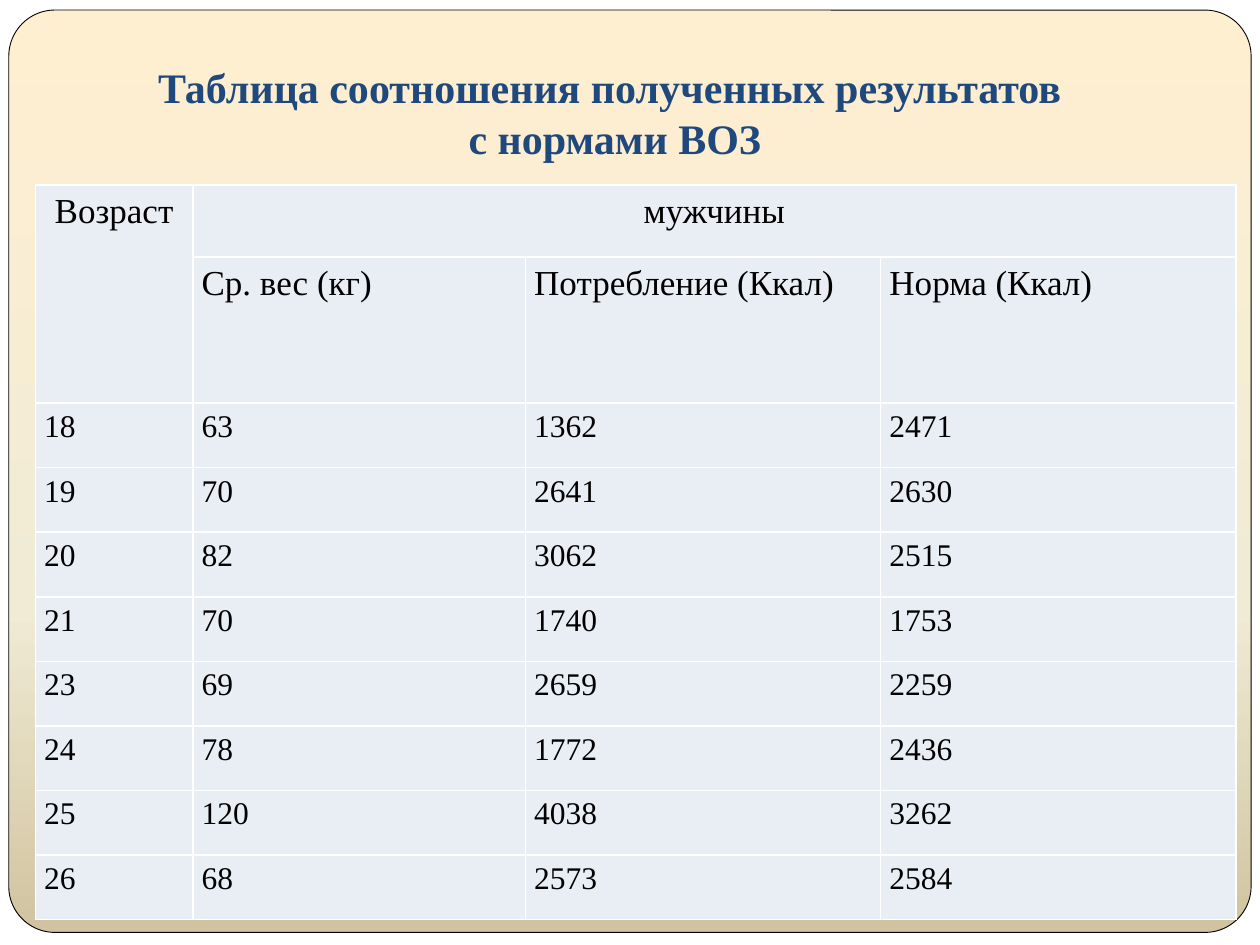
from dataclasses import dataclass

from lxml.etree import SubElement
from pptx import Presentation
from pptx.dml.color import RGBColor
from pptx.enum.shapes import MSO_SHAPE
from pptx.enum.text import MSO_ANCHOR, MSO_AUTO_SIZE, PP_ALIGN
from pptx.oxml import parse_xml
from pptx.oxml.ns import nsdecls, qn
from pptx.util import Inches, Pt


@dataclass(frozen=True)
class Theme:
    font: str = "Times New Roman"
    title_size: int = 24
    header_size: int = 20
    body_size: int = 18
    title: str = "1F497D"
    text: str = "000000"
    cell: str = "E9EDF4"
    white: str = "FFFFFF"
    outline: str = "000000"
    panel_stops: tuple = ((0, "FFEFD1"), (65, "F0EBD5"), (100, "D1C39F"))


@dataclass(frozen=True)
class Box:
    left: float
    top: float
    width: float
    height: float

    def inches(self):
        return [Inches(v) for v in (self.left, self.top, self.width, self.height)]


THEME = Theme()
TITLE_LINES = ["Таблица соотношения полученных результатов ", "с нормами ВОЗ"]
MEASURES = ["Ср. вес (кг)", "Потребление (Ккал)", "Норма (Ккал)"]
RESULTS = [
    (18, 63, 1362, 2471),
    (19, 70, 2641, 2630),
    (20, 82, 3062, 2515),
    (21, 70, 1740, 1753),
    (23, 69, 2659, 2259),
    (24, 78, 1772, 2436),
    (25, 120, 4038, 3262),
    (26, 68, 2573, 2584),
]
COLUMN_WIDTHS = [1.25, 2.64, 2.82, 2.82]
HEADER_HEIGHTS = [0.57, 1.16]


def style_runs(paragraph, size, color, bold=False):
    for run in paragraph.runs:
        run.font.name = THEME.font
        run.font.size = Pt(size)
        run.font.bold = bold
        run.font.color.rgb = RGBColor.from_string(color)


def add_panel(slide, box):
    panel = slide.shapes.add_shape(MSO_SHAPE.ROUNDED_RECTANGLE, *box.inches())
    panel.adjustments[0] = 0.05
    panel.shadow.inherit = False
    panel.line.color.rgb = RGBColor.from_string(THEME.outline)
    panel.line.width = Pt(0.5)
    stops = "".join(
        f'<a:gs pos="{position * 1000}"><a:srgbClr val="{color}"/></a:gs>'
        for position, color in THEME.panel_stops
    )
    gradient = parse_xml(
        f'<a:gradFill {nsdecls("a")} rotWithShape="1"><a:gsLst>{stops}</a:gsLst>'
        '<a:lin ang="5400000" scaled="0"/></a:gradFill>'
    )
    panel.element.spPr.find(qn("a:prstGeom")).addnext(gradient)


def place_title(slide, box):
    title = slide.shapes.title
    title.left, title.top, title.width, title.height = box.inches()
    frame = title.text_frame
    frame.text = "\n".join(TITLE_LINES)
    frame.word_wrap = True
    frame.auto_size = MSO_AUTO_SIZE.NONE
    frame.vertical_anchor = MSO_ANCHOR.TOP
    for paragraph in frame.paragraphs:
        paragraph.alignment = PP_ALIGN.CENTER
        style_runs(paragraph, THEME.title_size, THEME.title, bold=True)
    slide.shapes._spTree.append(title.element)


def add_borders(cell):
    properties = cell._tc.get_or_add_tcPr()
    for side in ("a:lnL", "a:lnR", "a:lnT", "a:lnB"):
        border = SubElement(properties, qn(side), w=str(Pt(1)))
        fill = SubElement(border, qn("a:solidFill"))
        SubElement(fill, qn("a:srgbClr"), val=THEME.white)


def format_cell(cell, size, alignment):
    add_borders(cell)
    cell.fill.solid()
    cell.fill.fore_color.rgb = RGBColor.from_string(THEME.cell)
    cell.margin_left = cell.margin_right = Inches(0.07)
    cell.margin_top, cell.margin_bottom = Inches(0.01), 0
    paragraph = cell.text_frame.paragraphs[0]
    paragraph.alignment = alignment
    paragraph.line_spacing = 1.15
    style_runs(paragraph, size, THEME.text)


def add_results_table(slide, box):
    rows = [("Возраст", "мужчины", "", ""), ("", *MEASURES), *RESULTS]
    table = slide.shapes.add_table(len(rows), len(COLUMN_WIDTHS), *box.inches()).table
    table.first_row = table.horz_banding = False
    for column, width in zip(table.columns, COLUMN_WIDTHS):
        column.width = Inches(width)
    result_height = (box.height - sum(HEADER_HEIGHTS)) / len(RESULTS)
    heights = HEADER_HEIGHTS + [result_height] * len(RESULTS)
    for row, height in zip(table.rows, heights):
        row.height = Inches(height)
    for r, values in enumerate(rows):
        size = THEME.header_size if r < len(HEADER_HEIGHTS) else THEME.body_size
        alignment = PP_ALIGN.CENTER if r == 0 else PP_ALIGN.LEFT
        for c, value in enumerate(values):
            cell = table.cell(r, c)
            cell.text_frame.text = str(value)
            format_cell(cell, size, alignment)
    table.cell(0, 0).merge(table.cell(1, 0))
    table.cell(0, 1).merge(table.cell(0, 3))


def main():
    presentation = Presentation()
    presentation.slide_width, presentation.slide_height = Inches(10), Inches(7.5)
    slide = presentation.slides.add_slide(presentation.slide_layouts[5])
    slide.background.fill.solid()
    slide.background.fill.fore_color.rgb = RGBColor.from_string(THEME.white)
    add_panel(slide, Box(0.07, 0.08, 9.86, 7.32))
    add_results_table(slide, Box(0.28, 1.47, 9.53, 5.83))
    place_title(slide, Box(0.35, 0.44, 9.06, 0.91))
    presentation.save("out.pptx")


if __name__ == "__main__":
    main()
